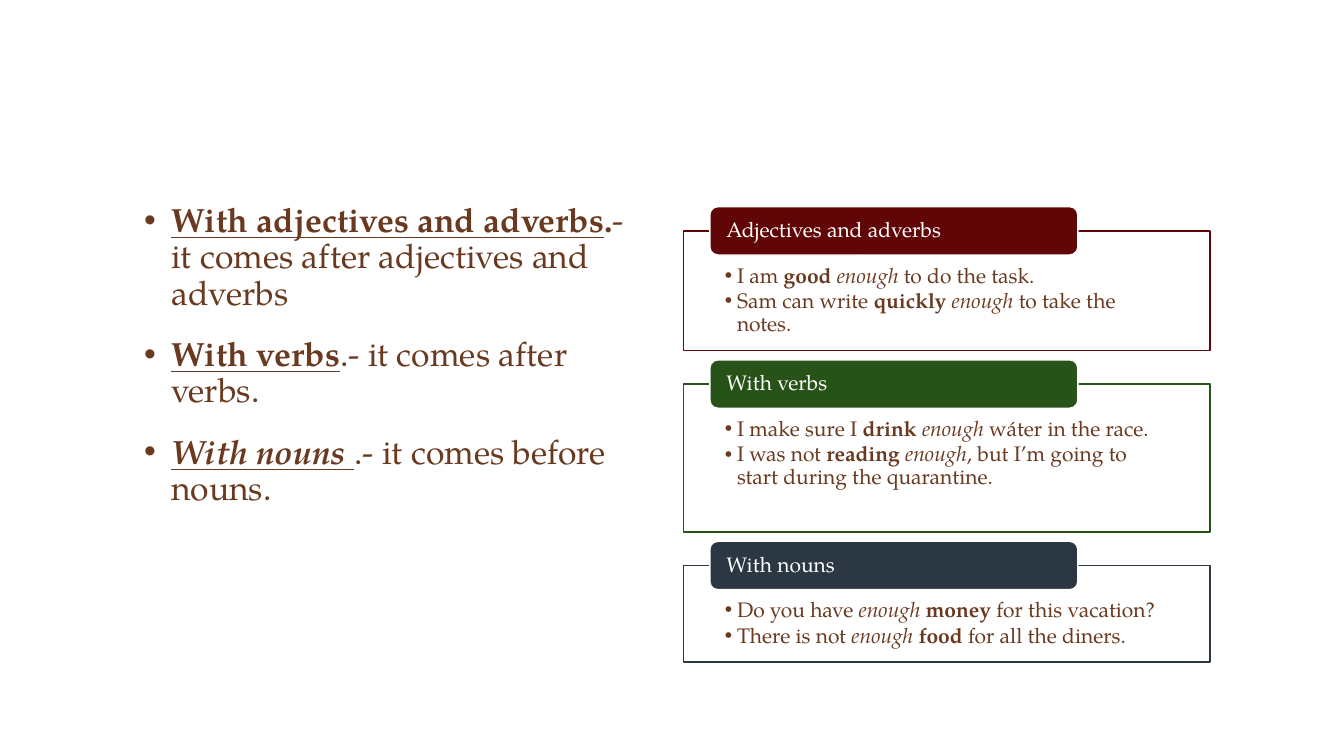
from pptx import Presentation
from pptx.dml.color import RGBColor
from pptx.enum.shapes import MSO_SHAPE
from pptx.enum.text import MSO_ANCHOR, PP_ALIGN
from pptx.oxml.ns import qn
from pptx.util import Inches, Pt
from lxml.etree import SubElement

FONT = "TeX Gyre Pagella"
BROWN = "6A3A20"
WHITE = "FFFFFF"

RULES = [
    [("With adjectives and adverbs", "bu"), (".", "b"),
     ("- it comes after adjectives and adverbs", "")],
    [("With verbs", "bu"), (".- it comes after verbs.", "")],
    [("With nouns", "biu"), (" ", "bu"), (".- it comes before nouns.", "")],
]

CARDS = [
    ("Adjectives and adverbs", "610606", 1.19, [
        [("I am ", ""), ("good ", "b"), ("enough", "i"), (" to do the task.", "")],
        [("Sam can write ", ""), ("quickly ", "b"), ("enough ", "i"),
         ("to take the notes.", "")],
    ]),
    ("With verbs", "275218", 1.47, [
        [("I make sure I ", ""), ("drink ", "b"), ("enough", "i"),
         (" wáter in the race.", "")],
        [("I was not ", ""), ("reading ", "b"), ("enough", "i"),
         (", but I’m going to start during the quarantine.", "")],
    ]),
    ("With nouns", "2B3742", 0.96, [
        [("Do you have ", ""), ("enough ", "i"), ("money ", "b"),
         ("for this vacation?", "")],
        [("There is not ", ""), ("enough ", "i"), ("food ", "b"),
         ("for all the diners.", "")],
    ]),
]

LEFT, TOP, WIDTH = 6.78, 2.05, 5.22
TAB_IN, TAB_W, TAB_H = 0.26, 3.65, 0.48
DROP, GAP = 0.24, 0.09


def color(code):
    return RGBColor.from_string(code)


def write(shape, paras, size=15, ink=BROWN, inset=(0.1, 0.05, 0.1, 0.05),
          indent=0, before=0, after=0, anchor=MSO_ANCHOR.TOP):
    frame = shape.text_frame
    frame.word_wrap = True
    frame.vertical_anchor = anchor
    (frame.margin_left, frame.margin_top,
     frame.margin_right, frame.margin_bottom) = map(Inches, inset)
    for num, runs in enumerate(paras):
        para = frame.add_paragraph() if num else frame.paragraphs[0]
        para.alignment = PP_ALIGN.LEFT
        para.line_spacing = 0.9
        para.space_before = Pt(before if num else 0)
        para.space_after = Pt(after)
        if indent:
            props = para._p.get_or_add_pPr()
            props.set("marL", str(Inches(indent)))
            props.set("indent", str(-Inches(indent)))
            SubElement(props, qn("a:buFont"), typeface="Arial")
            SubElement(props, qn("a:buChar"), char="•")
        for text, style in runs:
            run = para.add_run()
            run.text = text
            font = run.font
            font.name, font.size = FONT, Pt(size)
            font.color.rgb = color(ink)
            font.bold = "b" in style
            font.italic = "i" in style
            font.underline = "u" in style


def block(slide, kind, box, fill, line):
    shape = slide.shapes.add_shape(kind, *map(Inches, box))
    shape.shadow.inherit = False
    shape.fill.solid()
    shape.fill.fore_color.rgb = color(fill)
    shape.line.color.rgb = color(line)
    shape.line.width = Pt(1)
    return shape


def main():
    deck = Presentation()
    deck.slide_width, deck.slide_height = Inches(13.33), Inches(7.5)
    slide = deck.slides.add_slide(deck.slide_layouts[6])

    notes = slide.shapes.add_textbox(*map(Inches, (1.33, 1.97, 5.22, 4.67)))
    write(notes, RULES, size=24, indent=0.27, before=18)

    top = TOP
    for title, hue, height, lines in CARDS:
        body = block(slide, MSO_SHAPE.RECTANGLE,
                     (LEFT, top + DROP, WIDTH, height), WHITE, hue)
        tint = body.fill._xPr.find(qn("a:solidFill"))[0]
        SubElement(tint, qn("a:alpha"), val="90000")
        write(body, lines, inset=(0.41, 0.34, 0.41, 0.12), indent=0.12, after=2)
        tab = block(slide, MSO_SHAPE.ROUNDED_RECTANGLE,
                    (LEFT + TAB_IN, top, TAB_W, TAB_H), hue, WHITE)
        write(tab, [[(title, "")]], ink=WHITE, inset=(0.14, 0, 0.14, 0),
              anchor=MSO_ANCHOR.MIDDLE)
        top += DROP + height + GAP

    deck.save("out.pptx")


if __name__ == "__main__":
    main()
